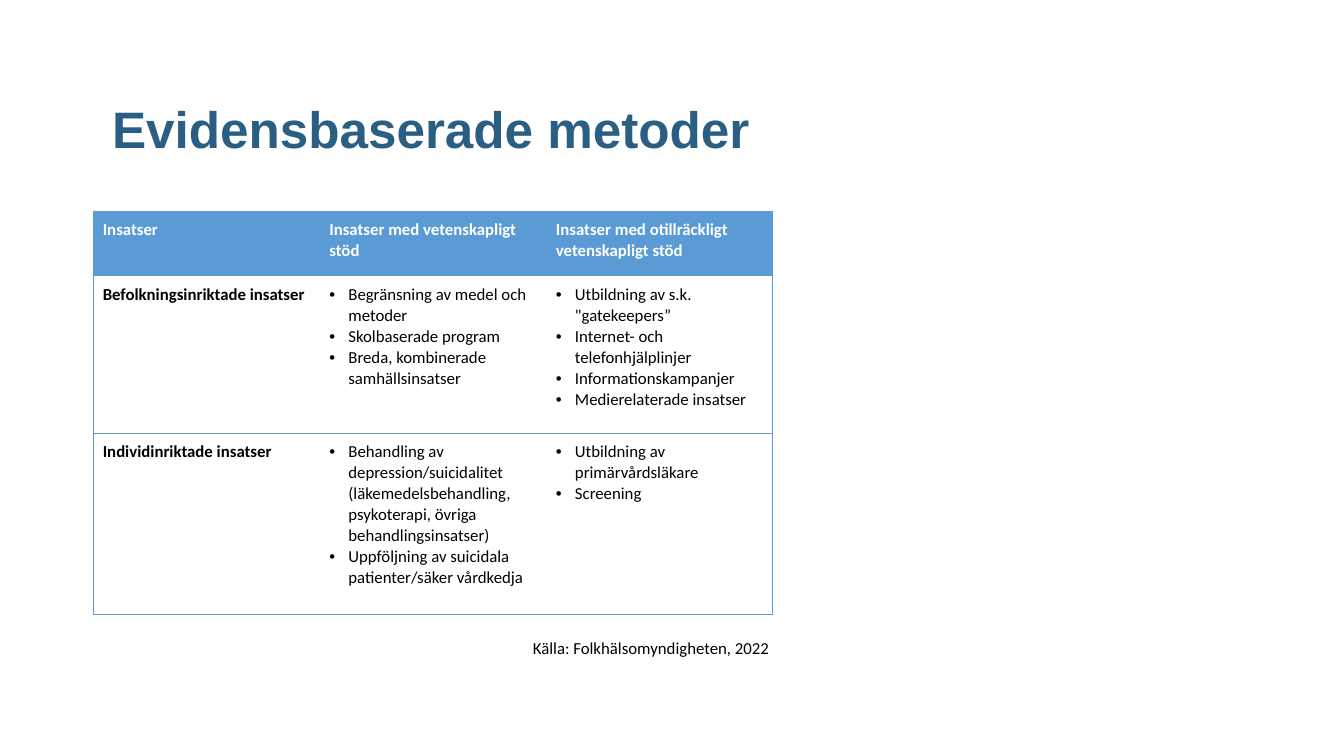
import pptx
import pptx.dml.color
import pptx.enum.text
import pptx.oxml
import pptx.oxml.ns
import pptx.util
from pptx.util import Cm

BLUE = "5B9BD5"
BLACK = "000000"
HEADERS = [
    "Insatser",
    "Insatser med vetenskapligt stöd",
    "Insatser med otillräckligt vetenskapligt stöd",
]
METHODS = [
    (
        "Befolkningsinriktade insatser",
        [
            "Begränsning av medel och metoder",
            "Skolbaserade program",
            "Breda, kombinerade samhällsinsatser",
        ],
        [
            "Utbildning av s.k. \"gatekeepers”",
            "Internet- och telefonhjälplinjer",
            "Informationskampanjer",
            "Medierelaterade insatser",
        ],
    ),
    (
        "Individinriktade insatser",
        [
            "Behandling av depression/suicidalitet (läkemedelsbehandling, "
            "psykoterapi, övriga behandlingsinsatser)",
            "Uppföljning av suicidala patienter/säker vårdkedja",
        ],
        ["Utbildning av primärvårdsläkare", "Screening"],
    ),
]


def rgb(value):
    return pptx.dml.color.RGBColor.from_string(value)


def add_child(parent, tag, **attributes):
    child = pptx.oxml.parse_xml(f'<{tag} {pptx.oxml.ns.nsdecls("a")}/>')
    for name, value in attributes.items():
        child.set(name, str(value))
    parent.append(child)
    return child


class SlideBuilder:
    def __init__(self, presentation):
        self.slide = presentation.slides.add_slide(presentation.slide_layouts[5])
        self.body_font = "Calibri"
        self.body_size = 12

    def add_text_run(self, paragraph, text, color=BLACK, bold=False, font=None,
                     size=None, spacing=None):
        if spacing:
            paragraph.line_spacing = pptx.util.Pt(spacing)
        run = paragraph.add_run()
        run.text = text
        run.font.name = font or self.body_font
        run.font.size = pptx.util.Pt(size or self.body_size)
        run.font.bold = bold
        run.font.color.rgb = rgb(color)

    def title(self, text, left, top, width, height):
        shape = self.slide.shapes.title
        shape.left, shape.top = Cm(left), Cm(top)
        shape.width, shape.height = Cm(width), Cm(height)
        frame = shape.text_frame
        frame.word_wrap = True
        frame.auto_size = pptx.enum.text.MSO_AUTO_SIZE.NONE
        frame.vertical_anchor = pptx.enum.text.MSO_ANCHOR.TOP
        paragraph = frame.paragraphs[0]
        paragraph.alignment = pptx.enum.text.PP_ALIGN.LEFT
        self.add_text_run(paragraph, text, "2B5E83", True, "Arial", 36.6, 42)

    def text(self, text, left, top, width, height):
        shape = self.slide.shapes.add_textbox(Cm(left), Cm(top), Cm(width), Cm(height))
        shape.text_frame.word_wrap = True
        self.add_text_run(shape.text_frame.paragraphs[0], text)

    def borders(self, cell, visible_sides):
        properties = cell._tc.get_or_add_tcPr()
        for side in "LRTB":
            line = add_child(properties, f"a:ln{side}", w=pptx.util.Pt(0.5))
            if side in visible_sides:
                add_child(add_child(line, "a:solidFill"), "a:srgbClr", val=BLUE)
            else:
                add_child(line, "a:noFill")

    def bullet(self, paragraph):
        properties = paragraph._p.get_or_add_pPr()
        properties.set("marL", str(Cm(0.48)))
        properties.set("indent", str(-Cm(0.48)))
        add_child(properties, "a:buFont", typeface="Arial")
        add_child(properties, "a:buChar", char="•")

    def cell(self, cell, content, color=BLACK, fill=None):
        """Fill a cell with a bold label (string) or bullets (list)."""
        cell.margin_left = cell.margin_right = Cm(0.25)
        cell.margin_top = cell.margin_bottom = Cm(0.2)
        if fill:
            cell.fill.solid()
            cell.fill.fore_color.rgb = rgb(fill)
        else:
            cell.fill.background()
        is_label = isinstance(content, str)
        frame = cell.text_frame
        for index, text in enumerate([content] if is_label else content):
            paragraph = frame.add_paragraph() if index else frame.paragraphs[0]
            if not is_label:
                self.bullet(paragraph)
            self.add_text_run(paragraph, text, color, is_label, spacing=15)

    def table(self, rows, left, top, column_width, row_heights):
        columns = len(rows[0])
        table = self.slide.shapes.add_table(
            len(rows), columns, Cm(left), Cm(top),
            Cm(column_width * columns), Cm(sum(row_heights))).table
        table.horz_banding = False
        for column in table.columns:
            column.width = Cm(column_width)
        for row_index, (contents, height) in enumerate(zip(rows, row_heights)):
            table.rows[row_index].height = Cm(height)
            for column_index, content in enumerate(contents):
                cell = table.cell(row_index, column_index)
                sides = "TB"
                if column_index == 0:
                    sides += "L"
                if column_index == columns - 1:
                    sides += "R"
                self.borders(cell, sides)
                if row_index == 0:
                    self.cell(cell, content, "FFFFFF", BLUE)
                else:
                    self.cell(cell, content)


def main():
    presentation = pptx.Presentation()
    presentation.slide_width = Cm(33.87)
    presentation.slide_height = Cm(19.05)
    builder = SlideBuilder(presentation)
    builder.title("Evidensbaserade metoder", 2.57, 2.39, 25.48, 5.59)
    builder.table([HEADERS, *METHODS], 2.34, 5.32, 5.71, [1.63, 3.97, 4.55])
    builder.text("Källa: Folkhälsomyndigheten, 2022", 13.18, 15.95, 9.5, 0.76)
    presentation.save("out.pptx")


if __name__ == "__main__":
    main()
